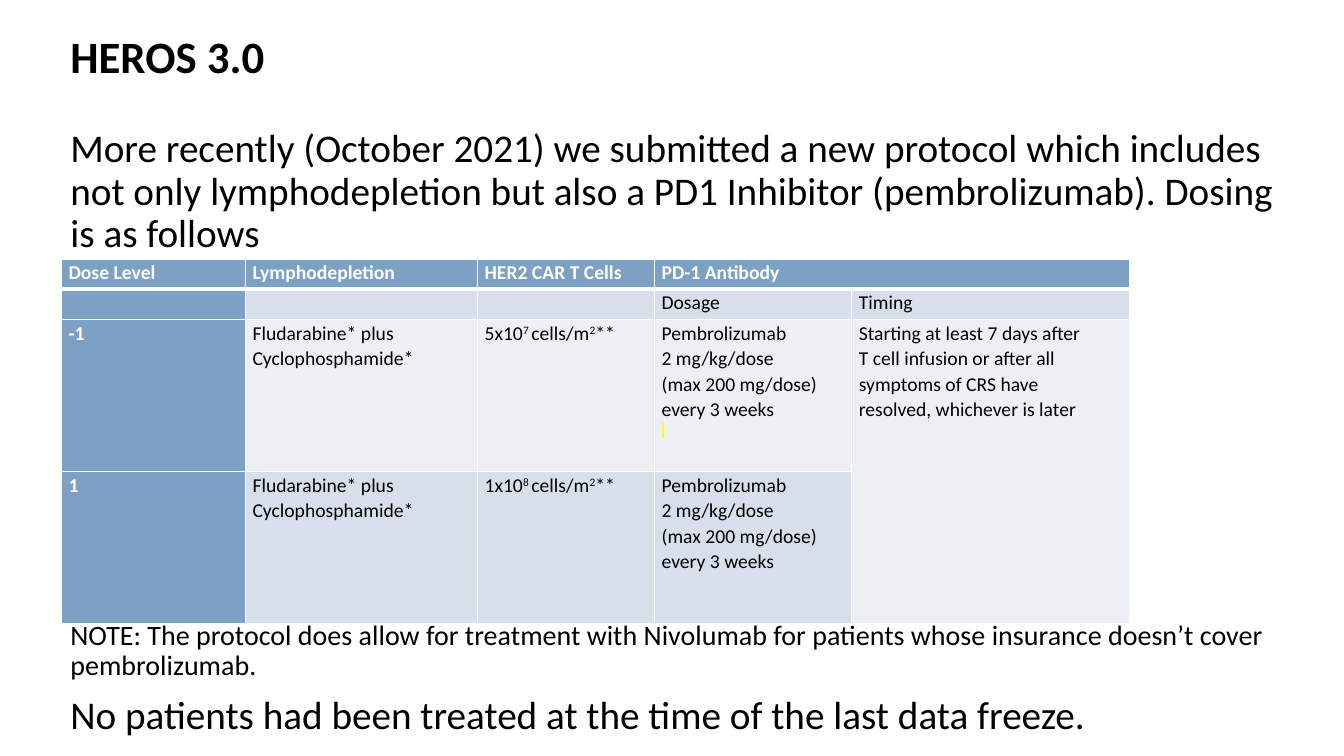
from lxml import etree
from pptx import Presentation
from pptx.dml.color import RGBColor
from pptx.enum.text import MSO_ANCHOR, PP_ALIGN
from pptx.oxml.ns import qn
from pptx.util import Pt

LEFT, JUSTIFY = PP_ALIGN.LEFT, PP_ALIGN.JUSTIFY
TOP, MIDDLE = MSO_ANCHOR.TOP, MSO_ANCHOR.MIDDLE

TITLE = "HEROS 3.0"
INTRO = ("More recently (October 2021) we submitted a new protocol which includes "
         "not only lymphodepletion but also a PD1 Inhibitor (pembrolizumab). "
         "Dosing is as follows")
NOTE = ("NOTE: The protocol does allow for treatment with Nivolumab for patients "
        "whose insurance doesn’t cover pembrolizumab.")
STATUS = "No patients had been treated at the time of the last data freeze."

# Text between carets is superscript; each line is a paragraph.
DEPLETION = "Fludarabine* plus\nCyclophosphamide*"
ANTIBODY = "Pembrolizumab\n2 mg/kg/dose\n(max 200 mg/dose)\nevery 3 weeks"
TIMING = ("Starting at least 7 days after\nT cell infusion or after all\n"
          "symptoms of CRS have\nresolved, whichever is later")
DOSES = [
    ["Dose Level", "Lymphodepletion", "HER2 CAR T Cells", "PD-1 Antibody", ""],
    ["", "", "", "Dosage", "Timing"],
    ["-1", DEPLETION, "5x10^7 ^cells/m^2^**", ANTIBODY, TIMING],
    ["1", DEPLETION, "1x10^8 ^cells/m^2^**", ANTIBODY, ""],
]
MERGES = [((0, 3), (0, 4)), ((2, 4), (3, 4))]
COLUMN_WIDTHS = [131.4, 165.8, 126.4, 140.9, 198.3]
ROW_HEIGHTS = [21.7, 21.7, 108.6, 108.6]

FONT = "Calibri"
BLACK, WHITE, YELLOW = "000000", "FFFFFF", "FFFF00"
BLUE = "7DA1C4"
BANDS = ["ECF0F5", "D7E0EA"]
TEXT_LEFT, TEXT_WIDTH = 43.2, 873.4


def rgb(value):
    return RGBColor.from_string(value)


def write(frame, text, size=14, color=BLACK, bold=False, align=LEFT,
          spacing=0.9, before=0, highlight=None):
    """Append text to a frame, one paragraph per line."""
    for line in text.split("\n"):
        paragraph = frame.paragraphs[-1]
        if paragraph.runs:
            paragraph = frame.add_paragraph()
        paragraph.alignment = align
        paragraph.line_spacing = spacing
        paragraph.space_before = Pt(before)
        if not line:
            paragraph._p.get_or_add_endParaRPr().set("sz", str(size * 100))
            continue
        for index, part in enumerate(line.split("^")):
            if not part:
                continue
            run = paragraph.add_run()
            run.text = part
            font = run.font
            font.name, font.size, font.bold = FONT, Pt(size), bold
            font.color.rgb = rgb(color)
            properties = run._r.get_or_add_rPr()
            if index % 2:
                properties.set("baseline", "30000")
            if highlight:
                mark = etree.Element(qn("a:highlight"))
                etree.SubElement(mark, qn("a:srgbClr"), val=highlight)
                properties.find(qn("a:latin")).addprevious(mark)


def add_text_frame(slide, left, top, width, height, anchor=TOP):
    frame = slide.shapes.add_textbox(Pt(left), Pt(top), Pt(width), Pt(height)).text_frame
    frame.word_wrap = True
    frame.vertical_anchor = anchor
    return frame


def add_borders(cell, heavy_edges):
    properties = cell._tc.get_or_add_tcPr()
    for edge in ("lnL", "lnR", "lnT", "lnB"):
        width = Pt(3 if edge in heavy_edges else 1)
        line = etree.SubElement(properties, qn(f"a:{edge}"), w=str(width))
        fill = etree.SubElement(line, qn("a:solidFill"))
        etree.SubElement(fill, qn("a:srgbClr"), val=WHITE)


def add_dose_table(slide, left, top):
    table = slide.shapes.add_table(
        len(DOSES), len(COLUMN_WIDTHS), Pt(left), Pt(top),
        Pt(sum(COLUMN_WIDTHS)), Pt(sum(ROW_HEIGHTS))).table
    table.horz_banding = False
    for column, width in zip(table.columns, COLUMN_WIDTHS):
        column.width = Pt(width)
    for row, height in zip(table.rows, ROW_HEIGHTS):
        row.height = Pt(height)
    for start, end in MERGES:
        table.cell(*start).merge(table.cell(*end))

    for r, texts in enumerate(DOSES):
        for c, text in enumerate(texts):
            cell = table.cell(r, c)
            heading = r == 0 or c == 0
            cell.margin_left = cell.margin_right = Pt(5)
            cell.margin_top = cell.margin_bottom = 0
            add_borders(cell, {0: ["lnB"], 1: ["lnT"]}.get(r, []))
            cell.fill.solid()
            cell.fill.fore_color.rgb = rgb(BLUE if heading else BANDS[r % 2])
            write(cell.text_frame, text, color=WHITE if heading else BLACK,
                  bold=heading, spacing=1.07,
                  align=JUSTIFY if heading or r == 1 else LEFT)
    write(table.cell(2, 3).text_frame, "\u00a0".replace("\u00a0", " "), size=9,
          spacing=1.07, highlight=YELLOW)


def main():
    deck = Presentation()
    deck.slide_width, deck.slide_height = Pt(960), Pt(540)
    slide = deck.slides.add_slide(deck.slide_layouts[6])

    title = add_text_frame(slide, TEXT_LEFT, 19.4, 717.8, 46, anchor=MIDDLE)
    write(title, TITLE, size=32, bold=True)
    intro = add_text_frame(slide, TEXT_LEFT, 88.6, TEXT_WIDTH, 100)
    write(intro, INTRO, size=28)
    add_dose_table(slide, 44, 185)
    closing = add_text_frame(slide, TEXT_LEFT, 440.4, TEXT_WIDTH, 94)
    write(closing, NOTE, size=20)
    write(closing, STATUS, size=28, before=10)

    deck.save("out.pptx")


if __name__ == "__main__":
    main()
